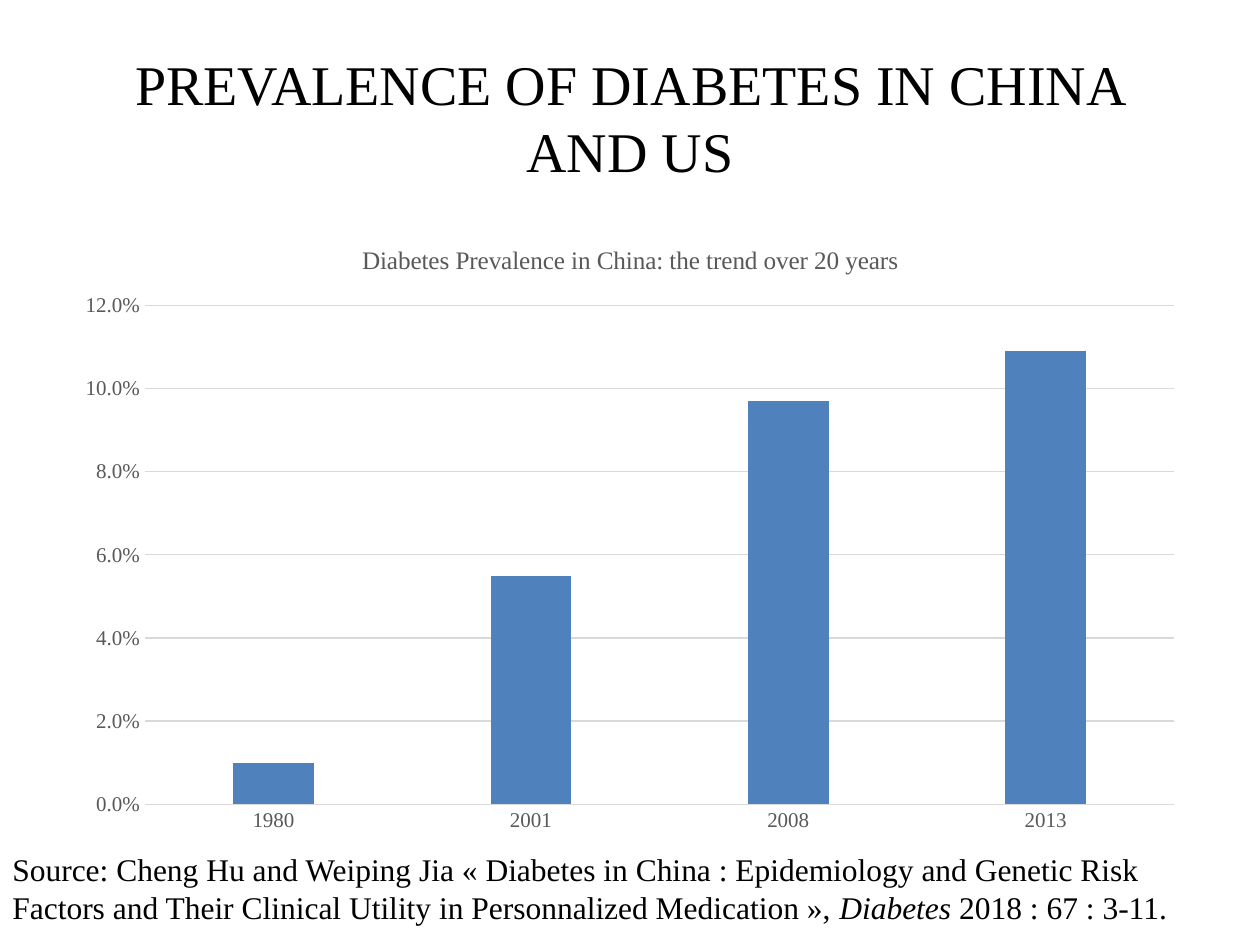
from pptx import Presentation
from pptx.chart.data import CategoryChartData
from pptx.dml.color import RGBColor
from pptx.enum.chart import XL_CHART_TYPE, XL_TICK_MARK
from pptx.enum.text import MSO_ANCHOR, PP_ALIGN
from pptx.util import Pt

COLUMNS = XL_CHART_TYPE.COLUMN_CLUSTERED
NO_TICK = XL_TICK_MARK.NONE
MIDDLE, TOP = MSO_ANCHOR.MIDDLE, MSO_ANCHOR.TOP
CENTER, LEFT = PP_ALIGN.CENTER, PP_ALIGN.LEFT

# Content
FONT = "Times New Roman"
BLACK, GRAY, RULE, BLUE = "000000", "595959", "D9D9D9", "4F81BD"
TITLE = [("PREVALENCE OF DIABETES IN CHINA AND US", False)]
SOURCE = [
    ("Source: Cheng Hu and Weiping Jia « Diabetes in China : Epidemiology and "
     "Genetic Risk Factors and Their Clinical Utility in Personnalized "
     "Medication », ", False),
    ("Diabetes ", True),
    ("2018 : 67 : 3-11.", False),
]
CHART_TITLE = "Diabetes Prevalence in China: the trend over 20 years"
PREVALENCE = {"1980": 0.01, "2001": 0.055, "2008": 0.097, "2013": 0.109}

# Layout: left, top, width, height in px
PX_PER_INCH = 126
PAGE_SIZE = (1260, 945)
TITLE_AREA = (63, 38, 1134, 157)
CHART_AREA = (63, 220, 1134, 624)
SOURCE_AREA = (0, 844, 1235, 89)


def emu(px):
    return round(px * 914400 / PX_PER_INCH)


def color(hex_code):
    return RGBColor.from_string(hex_code)


def style_font(font, size, hex_code):
    font.name = FONT
    font.size = Pt(size)
    font.bold = False
    font.color.rgb = color(hex_code)


def style_line(line):
    line.color.rgb = color(RULE)
    line.width = Pt(0.75)


def add_text(page, area, spans, size, align, anchor):
    box = page.shapes.add_textbox(*map(emu, area))
    frame = box.text_frame
    frame.word_wrap = True
    frame.vertical_anchor = anchor
    para = frame.paragraphs[0]
    para.alignment = align
    for text, italic in spans:
        span = para.add_run()
        span.text = text
        style_font(span.font, size, BLACK)
        span.font.italic = italic


def add_prevalence_chart(page):
    data = CategoryChartData(number_format="0.0%")
    data.categories = list(PREVALENCE)
    data.add_series("Series 1", list(PREVALENCE.values()))
    chart = page.shapes.add_chart(COLUMNS, *map(emu, CHART_AREA), data).chart
    style_font(chart.font, 12, BLACK)
    chart.has_legend = False

    # Heading
    chart.has_title = True
    chart.chart_title.include_in_layout = False
    para = chart.chart_title.text_frame.paragraphs[0]
    para.text = CHART_TITLE
    style_font(para.runs[0].font, 14.4, GRAY)

    # Columns
    plot = chart.plots[0]
    plot.gap_width = 219
    plot.overlap = -27
    plot.vary_by_categories = False
    fill = plot.series[0].format.fill
    fill.solid()
    fill.fore_color.rgb = color(BLUE)

    # Axes
    years, shares = chart.category_axis, chart.value_axis
    for axis in (years, shares):
        axis.major_tick_mark = axis.minor_tick_mark = NO_TICK
        style_font(axis.tick_labels.font, 12, GRAY)
    style_line(years.format.line)
    shares.format.line.fill.background()
    style_line(shares.major_gridlines.format.line)
    shares.minimum_scale, shares.maximum_scale = 0, 0.12
    shares.major_unit = 0.02
    shares.tick_labels.number_format = "0.0%"
    shares.tick_labels.number_format_is_linked = False


def main():
    deck = Presentation()
    deck.slide_width, deck.slide_height = map(emu, PAGE_SIZE)
    page = deck.slides.add_slide(deck.slide_layouts[6])
    add_prevalence_chart(page)
    add_text(page, TITLE_AREA, TITLE, 32, CENTER, MIDDLE)
    add_text(page, SOURCE_AREA, SOURCE, 18, LEFT, TOP)
    deck.save("out.pptx")


if __name__ == "__main__":
    main()
